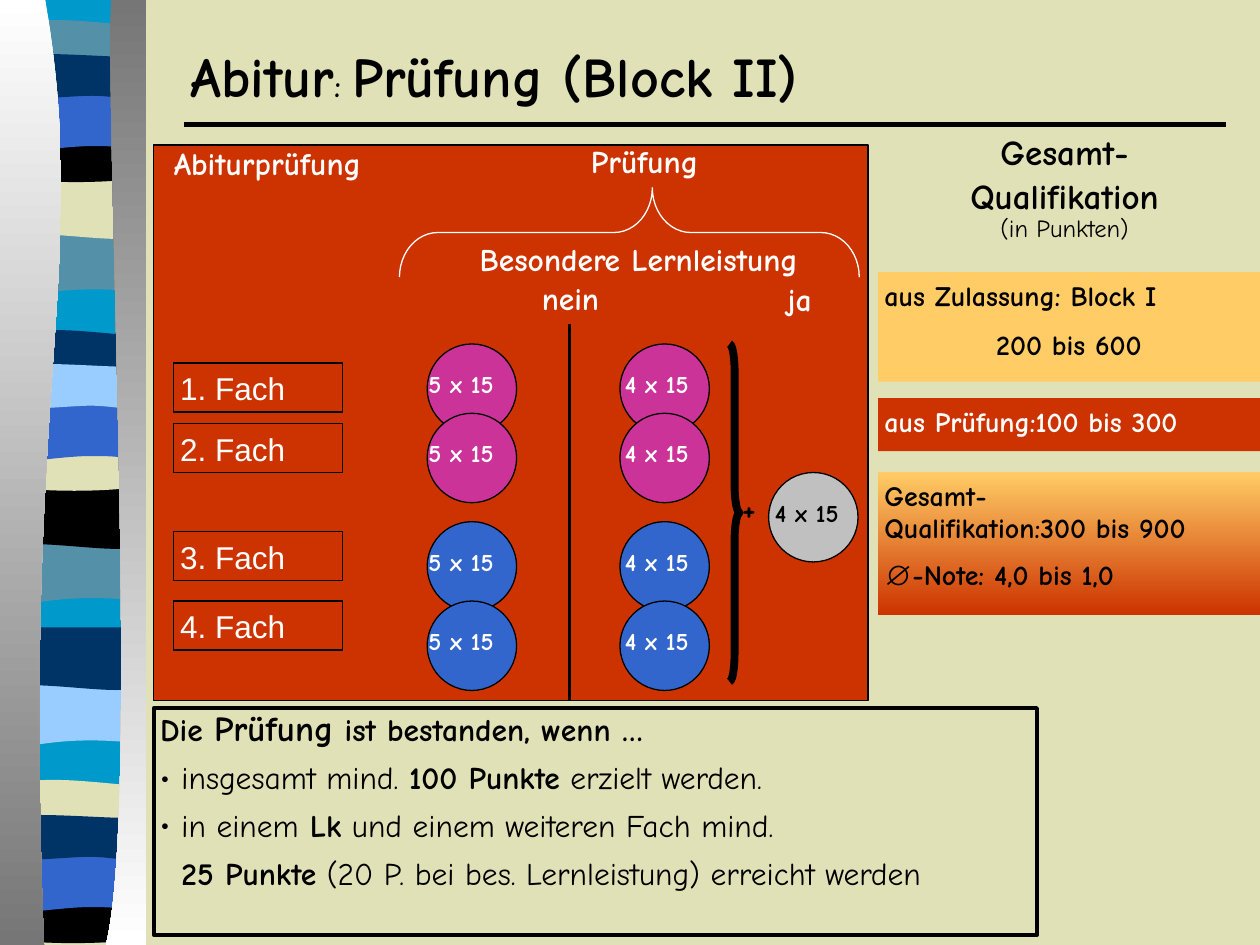
import pptx
import pptx.util
import pptx.dml.color
import pptx.enum.shapes
import pptx.enum.text
import pptx.oxml
import pptx.oxml.ns
import lxml.etree
from pptx.util import Inches

FORM = pptx.enum.shapes.MSO_SHAPE
ALIGN = pptx.enum.text.PP_ALIGN
FONT = "Comic Neue"
BLACK, WHITE, RED, PINK, BLUE = "000000", "FFFFFF", "CC3300", "CC3399", "3366CC"
NAVY, STEEL, SAND, SKY, GOLD = "003366", "5490A8", "E1E1B7", "99CCFF", "FFCC66"

RIGHT = 1.08
BANDS = [
    [(RIGHT, 0), (RIGHT, .47), (.33, .39, .18, .55, 0, .47), (0, 0)],
    [(RIGHT, 0), (RIGHT, .47), (.9, .55, .33, .42, 0, .47), (0, 0)],
    [(RIGHT, 0), (RIGHT, .24), (.9, .28, .18, .28, 0, .24), (0, 0),
     (.07, -.05, .24, -.05, .42, -.05), (.6, -.05, .94, -.01, RIGHT, 0)],
    [(RIGHT, 0), (RIGHT, .32), (.9, .38, .18, .38, 0, .32), (0, 0),
     (.66, .05, .85, 0, RIGHT, 0)],
    [(RIGHT, 0), (RIGHT, .47), (.91, .42, .84, .42, .66, .42),
     (.48, .42, .16, .47, 0, .47), (0, 0)],
    [(RIGHT, 0), (RIGHT, .31), (1.01, .36, .85, .31, .67, .31),
     (.49, .31, .11, .36, 0, .31), (0, 0), (.15, -.05, .74, 0, .92, 0)],
]
STACKS = [
    (.06, [1.85, 1.4, .21, 1.08, .74, .45], [STEEL, SAND, STEEL, BLACK, BLUE, NAVY]),
    (.05, [4.3, 3.86, 2.67, 3.53, 3.2, 2.91], [STEEL, BLACK, NAVY, SAND, BLUE, SKY]),
    (.04, [5.43, 4.98, 6.24, 7.12, 6.78, 6.49], [SKY, NAVY, SAND, BLACK, BLUE, NAVY]),
]
ROWS = [(2.88, 2.73, PINK), (3.36, 3.28, PINK), (4.22, 4.14, BLUE), (4.77, 4.77, BLUE)]
COLS = [(3.39, 3.35, "5 x 15"), (4.92, 4.91, "4 x 15")]


def tint(code):
    return pptx.dml.color.RGBColor.from_string(code)


def tag(parent, name, **traits):
    node = lxml.etree.SubElement(parent, pptx.oxml.ns.qn(name))
    for key, value in traits.items():
        node.set(key, str(value))
    return node


def paint(shape, fill=None, line=None, width=.75):
    shape.shadow.inherit = False
    if isinstance(fill, tuple):
        shape.fill.gradient()
        shape.fill.gradient_angle = 270
        for stop, code, place in zip(shape.fill.gradient_stops, fill, (0, 1)):
            stop.color.rgb = tint(code)
            stop.position = place
    elif fill:
        shape.fill.solid()
        shape.fill.fore_color.rgb = tint(fill)
    else:
        shape.fill.background()
    if line:
        shape.line.color.rgb = tint(line)
        shape.line.width = pptx.util.Pt(width)
    else:
        shape.line.fill.background()
    return shape


def block(slide, form, box, fill=None, line=None, width=.75):
    shape = slide.shapes.add_shape(form, *map(Inches, box))
    return paint(shape, fill, line, width)


def brace(slide, box, bend, mid, color, width, turn=0):
    shape = block(slide, FORM.RIGHT_BRACE, box, None, color, width)
    shape.adjustments[0] = bend
    shape.adjustments[1] = mid
    shape.rotation = turn


def outline(slide, left, top, trail, fill):
    spots = [(Inches(left + part[-2]), Inches(top + part[-1])) for part in trail]
    maker = slide.shapes.build_freeform(*spots[0], scale=1.0)
    maker.add_line_segments(spots[1:], close=True)
    shape = paint(maker.convert_to_shape(), fill)
    base = min(x for x, y in spots), min(y for x, y in spots)
    lines = list(shape._element.iter(pptx.oxml.ns.qn("a:lnTo")))
    for line, part in zip(lines, trail[1:]):
        if len(part) == 6:
            line.tag = pptx.oxml.ns.qn("a:cubicBezTo")
            line.remove(line[0])
            for x, y in zip(part[::2], part[1::2]):
                tag(line, "a:pt", x=Inches(left + x) - base[0], y=Inches(top + y) - base[1])


def rule(slide, start, end, width):
    line = slide.shapes.add_connector(
        pptx.enum.shapes.MSO_CONNECTOR.STRAIGHT, *map(Inches, start + end))
    line.line.color.rgb = tint(BLACK)
    line.line.width = pptx.util.Pt(width)
    tag(line._element.spPr, "a:effectLst")


def run(text, size, color=BLACK, bold=True, font=FONT):
    return text, size, color, bold, font


def para(*runs, before=10, align=ALIGN.LEFT, space=None, left=0, dot=False):
    return runs, before, align, space, left, dot


def indent(item, left, dot):
    props = item._p.get_or_add_pPr()
    props.set("marL", str(Inches(left)))
    props.set("indent", str(Inches(-left if dot else 0)))
    if dot:
        tag(props, "a:buFont", typeface=FONT)
        tag(props, "a:buChar", char="•")


def write(shape, *paras):
    frame = shape.text_frame
    frame.word_wrap = True
    frame.auto_size = pptx.enum.text.MSO_AUTO_SIZE.SHAPE_TO_FIT_TEXT
    frame.vertical_anchor = pptx.enum.text.MSO_ANCHOR.TOP
    frame.margin_left = frame.margin_right = Inches(.05)
    frame.margin_top = frame.margin_bottom = Inches(.05)
    for rank, (runs, before, align, space, left, dot) in enumerate(paras):
        item = frame.add_paragraph() if rank else frame.paragraphs[0]
        item.alignment = align
        item.space_before = pptx.util.Pt(before)
        if space:
            item.line_spacing = space
        indent(item, left, dot)
        for text, size, color, bold, font in runs:
            piece = item.add_run()
            piece.text = text
            piece.font.size = pptx.util.Pt(size)
            piece.font.color.rgb = tint(color)
            piece.font.bold = bold
            piece.font.name = font


def label(slide, box, *paras):
    write(slide.shapes.add_textbox(*map(Inches, box)), *paras)


def score(slide, left, top, inset, text, fill, color=WHITE):
    block(slide, FORM.OVAL, (left, top, .71, .71), fill, BLACK)
    label(slide, (inset, top + .15, .95, .36), para(run(text, 14, color), before=8))


def border(slide):
    group = slide.shapes.add_group_shape()
    block(group, FORM.RECTANGLE, (.06, 0, RIGHT, 7.48), "0099CC")
    for left, tops, fills in STACKS:
        for trail, top, fill in zip(BANDS, tops, fills):
            outline(group, left, top, trail, fill)
    outline(group, 0, 0, [(.36, 0), (.72, 2.16, .17, 2.96, .35, 7.5), (0, 7.5), (0, 0)],
            (WHITE, "767676"))
    outline(group, 0, 0, [(.88, 0), (.84, 1.25, 1.11, 6.46, .84, 7.5), (1.16, 7.5), (1.16, 0)],
            ("767676", WHITE))


def exam(slide):
    block(slide, FORM.RECTANGLE, (1.22, 1.15, 5.67, 4.41), RED, BLACK)
    for rank, (top, ring, fill) in enumerate(ROWS, 1):
        field = block(slide, FORM.RECTANGLE, (1.38, top, 1.34, .39), None, BLACK)
        write(field, para(run(f"{rank}. Fach", 18, WHITE, False, "Arial")))
        for left, inset, text in COLS:
            score(slide, left, ring, inset, text, fill)
    label(slide, (1.33, 1.09, 2.84, .45), para(run("Abiturprüfung", 18, WHITE)))
    label(slide, (4.64, 1.08, 1.34, .45), para(run("Prüfung", 18, WHITE)))
    label(slide, (3.25, 1.86, 3.64, .94),
          para(run("Besondere Lernleistung", 18, WHITE), align=ALIGN.CENTER),
          para(run("nein", 18, WHITE), space=.5, left=1))
    label(slide, (6.2, 2.17, .5, .45), para(run("ja", 18, WHITE)))
    rule(slide, (4.52, 2.57), (4.52, 5.56), 2.25)
    brace(slide, (5.79, 2.73, .08, 2.68), 2.79, .5, BLACK, 4.5)
    brace(slide, (4.64, .02, .71, 3.65), .43, .55, WHITE, .75, 270)
    label(slide, (5.84, 3.83, .55, .45), para(run("+", 18)))
    score(slide, 6.1, 3.75, 6.1, "4 x 15", "C0C0C0", BLACK)


def total(slide):
    label(slide, (7.03, .99, 2.84, 1.21),
          para(run("Gesamt-", 20), before=12, align=ALIGN.CENTER),
          para(run("Qualifikation", 20), before=12, align=ALIGN.CENTER, space=.45),
          para(run("(in Punkten)", 14, bold=False), before=8, align=ALIGN.CENTER, space=.45))
    cards = [
        (2.16, .87, GOLD, [para(run("aus Zulassung: Block I", 16), before=9),
                           para(run("200 bis 600", 16), before=9, align=ALIGN.CENTER)]),
        (3.16, .42, RED, [para(run("aus Prüfung:100 bis 300", 16, WHITE), before=9)]),
        (3.75, 1.13, (GOLD, RED), [
            para(run("Gesamt-", 16), before=9),
            para(run("Qualifikation:300 bis 900", 16), before=9, space=.4),
            para(run("∅", 16, bold=False, font="Arial"),
                 run("-Note: 4,0 bis 1,0", 16), before=9)]),
    ]
    for top, height, fill, paras in cards:
        write(block(slide, FORM.RECTANGLE, (6.97, top, 3.03, height), fill), *paras)


def passing(slide):
    panel = block(slide, FORM.RECTANGLE, (1.22, 5.62, 7.01, 1.8), None, BLACK, 2.25)
    write(panel,
          para(run("Die ", 18), run("Prüfung", 20), run(" ist bestanden, wenn …", 18),
               before=12, space=.8),
          para(run("insgesamt mind. ", 18, bold=False), run("100 Punkte", 18),
               run(" erzielt werden.", 18, bold=False), space=.8, left=.17, dot=True),
          para(run("in einem", 18, bold=False), run(" Lk", 18),
               run(" und einem weiteren Fach mind.", 18, bold=False),
               space=.8, left=.17, dot=True),
          para(run("25 Punkte", 18),
               run(" (20 P. bei bes. Lernleistung) erreicht werden", 18, bold=False),
               space=.8, left=.17))


def main():
    deck = pptx.Presentation()
    deck.slide_width, deck.slide_height = Inches(10), Inches(7.5)
    slide = deck.slides.add_slide(deck.slide_layouts[6])
    slide.background.fill.solid()
    slide.background.fill.fore_color.rgb = tint(SAND)
    border(slide)
    label(slide, (1.46, .28, 5.88, .71),
          para(run("Abitur", 32), run(": ", 18), run("Prüfung (Block II)", 32), before=19))
    rule(slide, (1.46, .99), (9.73, .99), 3)
    exam(slide)
    total(slide)
    passing(slide)
    deck.save("out.pptx")


if __name__ == "__main__":
    main()
